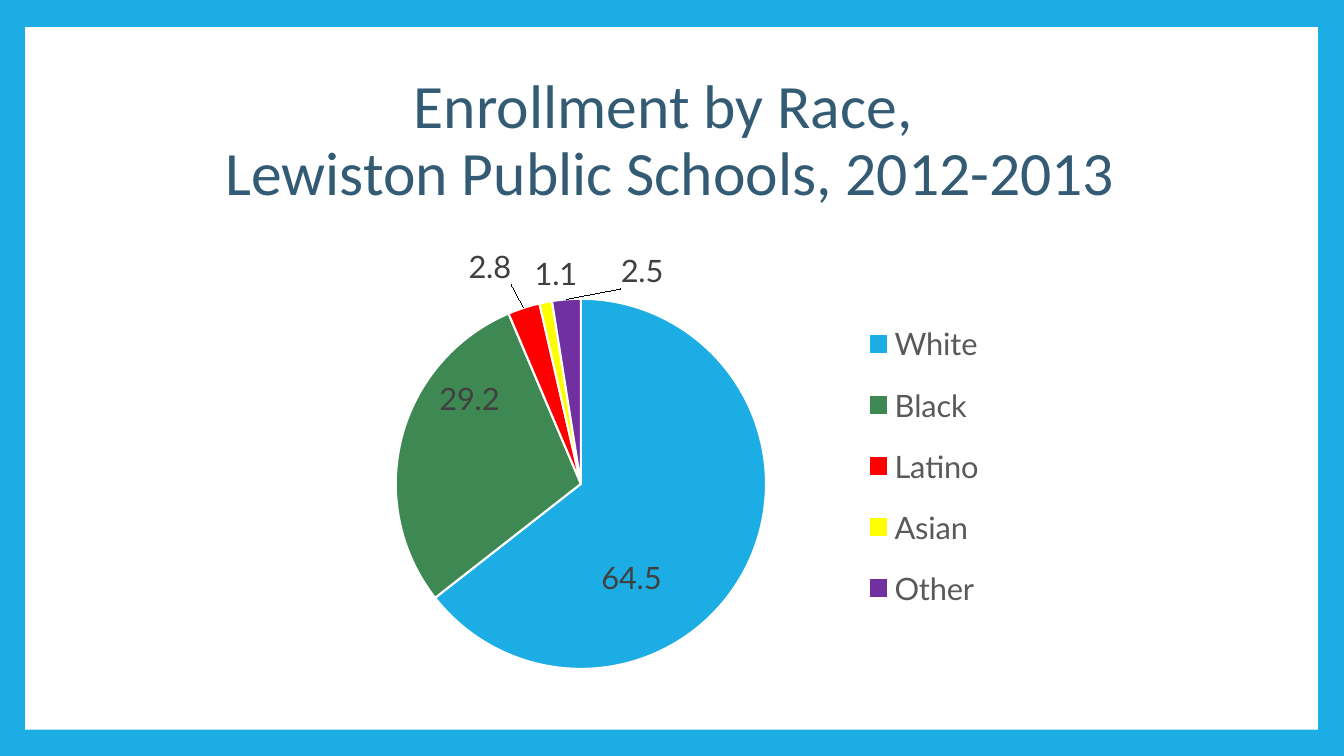
import pptx
import pptx.chart.data
import pptx.dml.color
import pptx.enum.chart
import pptx.enum.shapes
import pptx.enum.text
import pptx.oxml
import pptx.oxml.ns
import pptx.util

RGB = pptx.dml.color.RGBColor
BLUE = RGB(0x1C, 0xAD, 0xE4)
GREEN = RGB(0x3E, 0x88, 0x53)
RED = RGB(0xFF, 0x00, 0x00)
YELLOW = RGB(0xFF, 0xFF, 0x00)
PURPLE = RGB(0x70, 0x30, 0xA0)
WHITE = RGB(0xFF, 0xFF, 0xFF)
NAVY = RGB(0x33, 0x5B, 0x74)
DARK = RGB(0x40, 0x40, 0x40)
GRAY = RGB(0x59, 0x59, 0x59)

WIDE, HIGH = 13.33, 7.5
POS = pptx.enum.chart.XL_LABEL_POSITION

# name, value, colour, label position, label shift as shares of the chart
RACES = [
    ("White", 64.5, BLUE, POS.CENTER, (-0.03, 0.12)),
    ("Black", 29.2, GREEN, POS.CENTER, (-0.02, -0.14)),
    ("Latino", 2.8, RED, POS.OUTSIDE_END, (-0.01, -0.04)),
    ("Asian", 1.1, YELLOW, POS.OUTSIDE_END, (0.03, -0.01)),
    ("Other", 2.5, PURPLE, POS.OUTSIDE_END, (0.07, -0.01)),
]


def style(font, size, color, face):
    font.size = pptx.util.Pt(size)
    font.color.rgb = color
    font.name = face


def write(frame, text, size, color, face, align, space=1.0):
    frame.word_wrap = True
    frame.vertical_anchor = pptx.enum.text.MSO_ANCHOR.MIDDLE
    frame.text = text
    for para in frame.paragraphs:
        para.alignment = align
        para.line_spacing = space
        for run in para.runs:
            style(run.font, size, color, face)


def place(node, index, inner=False, **shares):
    """Give a chart part a manual layout, in shares of the chart."""
    for old in node.findall(pptx.oxml.ns.qn("c:layout")):
        node.remove(old)
    parts = '<c:layoutTarget val="inner"/>' if inner else ""
    if "w" in shares:
        parts += '<c:xMode val="edge"/><c:yMode val="edge"/>'
    parts += "".join(f'<c:{key} val="{val}"/>' for key, val in shares.items())
    node.insert(index, pptx.oxml.parse_xml(
        f'<c:layout {pptx.oxml.ns.nsdecls("c")}>'
        f"<c:manualLayout>{parts}</c:manualLayout></c:layout>"))


class Deck:
    """Holds the slide and its style; boxes are shares of the slide's size."""
    head = "Calibri"
    body = "Lato"

    def __init__(self):
        self.show = pptx.Presentation()
        self.show.slide_width = pptx.util.Inches(WIDE)
        self.show.slide_height = pptx.util.Inches(HIGH)
        self.slide = self.show.slides.add_slide(self.show.slide_layouts[5])
        fill = self.slide.background.fill
        fill.solid()
        fill.fore_color.rgb = BLUE

    def box(self, left, top, width, height):
        wide, high = self.show.slide_width, self.show.slide_height
        return (round(left * wide), round(top * high),
                round(width * wide), round(height * high))

    def panel(self, *area):
        shape = self.slide.shapes.add_shape(
            pptx.enum.shapes.MSO_SHAPE.RECTANGLE, *self.box(*area))
        shape.shadow.inherit = False
        shape.fill.solid()
        shape.fill.fore_color.rgb = WHITE
        shape.line.fill.background()
        tree = self.slide.shapes.element
        tree.remove(shape.element)
        tree.insert(2, shape.element)

    def title(self, text, *area):
        title = self.slide.shapes.title
        title.left, title.top, title.width, title.height = self.box(*area)
        write(title.text_frame, text, 44, NAVY, self.head,
              pptx.enum.text.PP_ALIGN.CENTER, 0.9)

    def pie(self, rows, *area):
        data = pptx.chart.data.CategoryChartData()
        data.categories = [row[0] for row in rows]
        data.add_series("Series 1", [row[1] for row in rows])
        chart = self.slide.shapes.add_chart(
            pptx.enum.chart.XL_CHART_TYPE.PIE, *self.box(*area), data).chart
        chart.has_title = False
        chart.font.name = self.head
        chart.font.size = pptx.util.Pt(10)
        plot = chart.plots[0]
        plot.vary_by_categories = True
        area_node = chart.element.find(".//" + pptx.oxml.ns.qn("c:plotArea"))
        place(area_node, 0, inner=True, x=0.27, y=0.13, w=0.34, h=0.84)
        self.slices(plot.series[0], rows)
        self.legend(chart)

    def slices(self, series, rows):
        labels = series.data_labels
        labels.show_value = True
        style(labels.font, 22, DARK, self.body)
        lead = labels._element.find(pptx.oxml.ns.qn("c:showLeaderLines"))
        if lead is not None:
            lead.set("val", "1")
        for index, (name, value, color, spot, (x, y)) in enumerate(rows):
            point = series.points[index]
            point.format.fill.solid()
            point.format.fill.fore_color.rgb = color
            point.format.line.color.rgb = WHITE
            point.format.line.width = pptx.util.Pt(1.5)
            label = point.data_label
            style(label.font, 22, DARK, self.body)
            label.position = spot
            place(labels._element.findall(pptx.oxml.ns.qn("c:dLbl"))[index],
                  1, x=x, y=y)

    def legend(self, chart):
        chart.has_legend = True
        legend = chart.legend
        legend.position = pptx.enum.chart.XL_LEGEND_POSITION.RIGHT
        legend.include_in_layout = False
        style(legend.font, 22, GRAY, self.body)
        place(legend._element, 1, x=0.69, y=0.14, w=0.13, h=0.74)


def main():
    deck = Deck()
    deck.panel(0.25 / WIDE, 0.27 / HIGH, 12.82 / WIDE, 6.97 / HIGH)
    deck.title("Enrollment by Race, \vLewiston Public Schools, 2012-2013",
               1.25 / WIDE, 0.67 / HIGH, 10.8 / WIDE, 1.48 / HIGH)
    deck.pie(RACES, 1.01 / WIDE, 2.37 / HIGH, 10.8 / WIDE, 4.42 / HIGH)
    deck.show.save("out.pptx")


if __name__ == "__main__":
    main()
